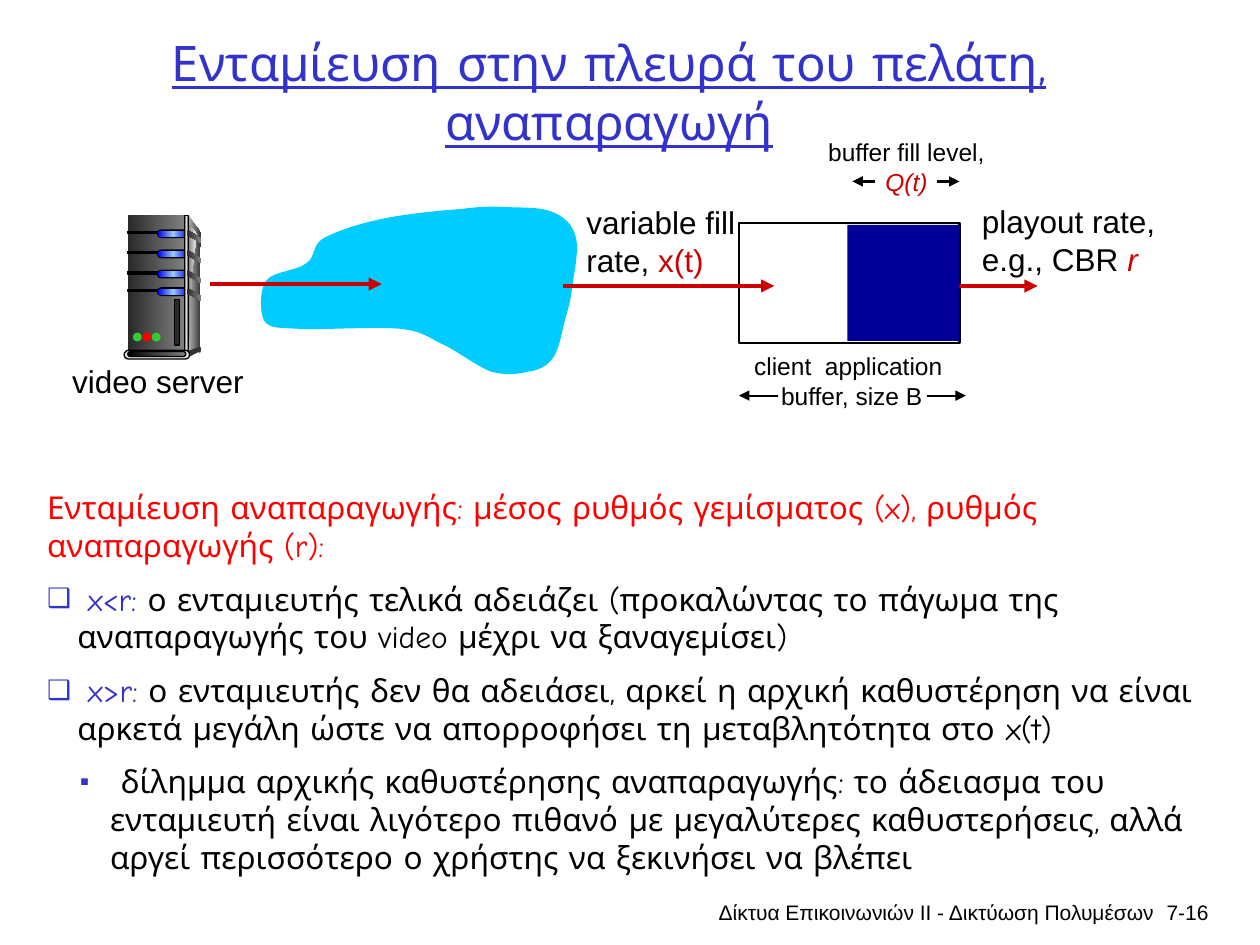
from dataclasses import dataclass

from lxml.etree import SubElement
from pptx import Presentation
from pptx.dml.color import RGBColor
from pptx.enum.shapes import MSO_CONNECTOR, MSO_SHAPE
from pptx.enum.text import MSO_ANCHOR, PP_ALIGN
from pptx.oxml.ns import qn
from pptx.util import Inches, Pt

CELL = Inches(0.01)  # the slide is a grid of 1000 columns by 750 rows
SANS, COMIC = "Arial", "Comic Neue"

BLACK = RGBColor(0x00, 0x00, 0x00)
CHARCOAL = RGBColor(0x29, 0x29, 0x29)
DARK = RGBColor(0x33, 0x33, 0x33)
GREY = RGBColor(0x80, 0x80, 0x80)
SILVER = RGBColor(0xDD, 0xDD, 0xDD)
PALE = RGBColor(0xF8, 0xF8, 0xF8)
BLUE = RGBColor(0x00, 0x00, 0xFF)
SKY = RGBColor(0x99, 0xCC, 0xFF)
CYAN = RGBColor(0x00, 0xCC, 0xFF)
NAVY = RGBColor(0x00, 0x00, 0x99)
INDIGO = RGBColor(0x33, 0x33, 0xCC)
GREEN = RGBColor(0x33, 0xCC, 0x33)
RED = RGBColor(0xFF, 0x00, 0x00)
CRIMSON = RGBColor(0xCC, 0x00, 0x00)


@dataclass
class Box:
    """A region of the slide, measured in grid cells."""
    left: float
    top: float
    width: float
    height: float

    def point(self, col, row):
        return round((self.left + col) * CELL), round((self.top + row) * CELL)

    def area(self, col, row, cols, rows):
        return *self.point(col, row), round(cols * CELL), round(rows * CELL)

    def whole(self):
        return self.area(0, 0, self.width, self.height)


def paint(shape, colours, line=None):
    """Fill with nothing, one colour or an even left-to-right gradient."""
    shape.shadow.inherit = False
    if not colours:
        shape.fill.background()
    elif len(colours) == 1:
        shape.fill.solid()
        shape.fill.fore_color.rgb = colours[0]
    else:
        shape.fill.gradient()
        shape.fill.gradient_angle = 0
        stops = shape._element.spPr.find(".//" + qn("a:gsLst"))
        for stop in list(stops):
            stops.remove(stop)
        for i, colour in enumerate(colours):
            position = str(round(100000 * i / (len(colours) - 1)))
            stop = SubElement(stops, qn("a:gs"), pos=position)
            SubElement(stop, qn("a:srgbClr"), val=str(colour))
    if line:
        shape.line.color.rgb = BLACK
        shape.line.width = Pt(line)
    else:
        shape.line.fill.background()


def add_part(shapes, kind, area, colours, line=None):
    part = shapes.add_shape(kind, *area)
    if kind == MSO_SHAPE.ROUNDED_RECTANGLE:
        part.adjustments[0] = 0.5
    paint(part, colours, line)


def add_outline(shapes, box, start, segments, colours):
    """Each segment is (end,) for a line or (control, control, end) for a curve."""
    builder = shapes.build_freeform(*box.point(*start))
    builder.add_line_segments([box.point(*segment[-1]) for segment in segments], close=True)
    outline = builder.convert_to_shape()
    paint(outline, colours)
    edges = outline._element.spPr.findall(".//" + qn("a:lnTo"))
    for edge, segment in zip(edges, segments):
        if len(segment) == 3:
            edge.tag = qn("a:cubicBezTo")
            edge.remove(edge[0])
            for x, y in (box.point(*point) for point in segment):
                SubElement(edge, qn("a:pt"), x=str(x - outline.left), y=str(y - outline.top))


def add_arrow(shapes, box, start, end, colour=BLACK, width=1.25):
    arrow = shapes.add_connector(MSO_CONNECTOR.STRAIGHT, *box.point(*start), *box.point(*end))
    arrow.line.color.rgb = colour
    arrow.line.width = Pt(width)
    SubElement(arrow.line._ln, qn("a:tailEnd"), type="triangle")
    SubElement(arrow._element.spPr, qn("a:effectLst"))


def write(paragraph, runs, size, font=SANS):
    for text, colour, *italic in runs:
        run = paragraph.add_run()
        run.text = text
        run.font.color.rgb = colour
        if italic:
            run.font.italic = True
    paragraph.font.size = Pt(size)
    paragraph.font.name = font


def add_label(shapes, area, lines, size, align=PP_ALIGN.LEFT, wrap=True):
    frame = shapes.add_textbox(*area).text_frame
    frame.word_wrap = wrap
    for i, runs in enumerate(lines):
        paragraph = frame.add_paragraph() if i else frame.paragraphs[0]
        paragraph.alignment = align
        write(paragraph, runs, size)


def add_title(slide, box):
    title = slide.shapes.title
    title.left, title.top, title.width, title.height = box.whole()
    title.text_frame.vertical_anchor = MSO_ANCHOR.MIDDLE
    paragraph = title.text_frame.paragraphs[0]
    paragraph.alignment = PP_ALIGN.CENTER
    write(paragraph, [("Ενταμίευση στην πλευρά του πελάτη, αναπαραγωγή", INDIGO)], 28, COMIC)
    paragraph.font.underline = True


def add_server(slide, box):
    shapes = slide.shapes.add_group_shape().shapes
    rect, pill, oval = MSO_SHAPE.RECTANGLE, MSO_SHAPE.ROUNDED_RECTANGLE, MSO_SHAPE.OVAL
    metal = [CHARCOAL, GREY]
    bays = (11, 27, 43, 57)
    add_outline(shapes, box, (51, 0), [[(61, 14)], [(60, 104)], [(48, 109)]], [SILVER, DARK])
    add_part(shapes, rect, box.area(3, 0, 45, 108), metal)
    add_outline(shapes, box, (51, 7), [
        [(51, 7), (53, 8), (58, 15)], [(51, 55), (52, 107), (51, 106)]], [GREY, PALE])
    for row in bays:
        add_part(shapes, rect, box.area(3, row + 1.5, 26, 2), [BLACK], 0.75)
        add_part(shapes, pill, box.area(26, row, 25, 7), [BLACK])
        add_part(shapes, pill, box.area(27, row + 1, 24, 5), [BLUE, SKY, BLUE])
    add_part(shapes, rect, box.area(48, 0, 3, 108), [DARK, SILVER, DARK], 0.75)
    for row in bays:
        add_outline(shapes, box, (50, row + 1), [
            [(52, row + 1), (56, row + 4), (61, row + 7)], [(61, row + 11)],
            [(61, row + 11), (55, row + 7), (50, row + 5)]], metal)
    add_part(shapes, oval, box.area(59, 104, 2, 5), [DARK])
    add_outline(shapes, box, (50, 108), [[(50, 113)], [(60, 108)], [(60, 104)]], [DARK])
    add_part(shapes, pill, box.area(0, 107, 52, 7), [SILVER], 0.75)
    add_part(shapes, pill, box.area(3, 108, 46, 4), [BLACK, GREY], 0.75)
    for i, lamp in enumerate((GREEN, RED, GREEN)):
        add_part(shapes, oval, box.area(7 + 7.5 * i, 93, 7, 7), [lamp])
    add_part(shapes, rect, box.area(40, 67, 4, 36), [CHARCOAL], 0.75)
    add_label(slide.shapes, box.area(-51, 111.5, 156, 40), [[("video server", BLACK)]], 18, wrap=False)


def add_network(slide, box):
    add_outline(slide.shapes, box, (159, 2), [
        [(143, 3), (114, 6), (96, 10)], [(77, 14), (60, 20), (51, 25)],
        [(41, 31), (45, 40), (37, 45)], [(30, 51), (11, 51), (5, 59)],
        [(0, 66), (0, 85), (4, 91)], [(9, 97), (15, 96), (32, 97)],
        [(50, 98), (93, 95), (112, 97)], [(131, 99), (135, 105), (147, 110)],
        [(159, 116), (173, 127), (184, 131)], [(195, 134), (205, 133), (213, 131)],
        [(221, 130), (228, 127), (233, 120)], [(238, 113), (240, 99), (243, 88)],
        [(246, 78), (248, 69), (249, 58)], [(251, 46), (254, 30), (250, 21)],
        [(247, 12), (239, 6), (229, 3)], [(219, 0), (202, 1), (190, 0)],
        [(178, 0), (175, 0), (159, 2)]], [CYAN])
    add_arrow(slide.shapes, box, (-39, 61.5), (97, 61.5), CRIMSON, 2.5)


def add_buffer(slide, box):
    shapes, centre, middle = slide.shapes, PP_ALIGN.CENTER, 50
    add_part(shapes, MSO_SHAPE.RECTANGLE, box.whole(), [], 1.25)
    add_arrow(shapes, box, (-140, middle), (28, middle), CRIMSON, 2.5)
    add_arrow(shapes, box, (166, middle), (237, middle), CRIMSON, 2.5)
    add_part(shapes, MSO_SHAPE.RECTANGLE, box.area(86, 1.5, 89, 92), [NAVY])
    add_label(shapes, box.area(-131, -20.5, 145, 70), [
        [("variable fill", BLACK)], [("rate, ", BLACK), ("x(t)", CRIMSON)]], 18, wrap=False)
    add_label(shapes, box.area(183, -21.5, 158, 70), [
        [("playout rate,", BLACK)], [("e.g., CBR ", BLACK), ("r", CRIMSON, True)]], 18, wrap=False)
    add_label(shapes, box.area(-1, 97, 181, 57), [
        [("client  application ", BLACK)], [("buffer, size B", BLACK)]], 14, centre)
    add_label(shapes, box.area(55, -73, 156, 57), [
        [("buffer fill level, ", BLACK), ("Q(t)", CRIMSON, True)]], 14, centre)
    for row, left, left_tip, right, right_tip in ((137, 31, 0, 149, 180), (-33, 108, 90, 157, 175)):
        add_arrow(shapes, box, (left, row), (left_tip, row))
        add_arrow(shapes, box, (right, row), (right_tip, row))


def add_explanation(slide, box):
    frame = slide.shapes.add_textbox(*box.whole()).text_frame
    frame.word_wrap = True
    points = [
        (None, 0, [("Ενταμίευση αναπαραγωγής: μέσος ρυθμός γεμίσματος (x), ρυθμός αναπαραγωγής (r):", RED)]),
        ("❑", 0.24, [(" x<r: ", INDIGO), ("ο ενταμιευτής τελικά αδειάζει (προκαλώντας το πάγωμα της "
                     "αναπαραγωγής του video μέχρι να ξαναγεμίσει)", BLACK)]),
        ("❑", 0.24, [(" x>r: ", INDIGO), ("ο ενταμιευτής δεν θα αδειάσει, αρκεί η αρχική καθυστέρηση να είναι "
                     "αρκετά μεγάλη ώστε να απορροφήσει τη μεταβλητότητα στο x(t)", BLACK)]),
        ("▪", 0.5, [(" δίλημμα αρχικής καθυστέρησης αναπαραγωγής: το άδειασμα του ενταμιευτή είναι λιγότερο "
                    "πιθανό με μεγαλύτερες καθυστερήσεις, αλλά αργεί περισσότερο ο χρήστης να ξεκινήσει "
                    "να βλέπει", BLACK)]),
    ]
    for i, (bullet, margin, runs) in enumerate(points):
        paragraph = frame.add_paragraph() if i else frame.paragraphs[0]
        if bullet:
            paragraph.level = 1 if bullet == "▪" else 0
            properties = paragraph._p.get_or_add_pPr()
            properties.set("marL", str(Inches(margin)))
            properties.set("indent", str(-Inches(0.24)))
            SubElement(SubElement(properties, qn("a:buClr")), qn("a:srgbClr"), val=str(INDIGO))
            SubElement(properties, qn("a:buSzPct"), val="85000")
            SubElement(properties, qn("a:buFont"), typeface=SANS)
            SubElement(properties, qn("a:buChar"), char=bullet)
            paragraph.space_before = Pt(9)
        write(paragraph, runs, 18, COMIC)


def add_footer(slide, box):
    for col, cols, text in ((0, 472, "Δίκτυα Επικοινωνιών ΙΙ - Δικτύωση Πολυμέσων"), (441, 74, "7-16")):
        add_label(slide.shapes, box.area(col, 0, cols, box.height), [[(text, BLACK)]], 12, PP_ALIGN.RIGHT)


def main():
    deck = Presentation()
    deck.slide_width, deck.slide_height = 1000 * CELL, 750 * CELL
    slide = deck.slides.add_slide(deck.slide_layouts[5])
    add_title(slide, Box(58.5, 25, 850, 95))
    add_server(slide, Box(98.5, 171, 62, 114))
    add_network(slide, Box(206, 164, 254, 134))
    add_buffer(slide, Box(586.5, 177, 175, 95))
    add_explanation(slide, Box(27.5, 382.5, 947, 326))
    add_footer(slide, Box(454, 709, 515, 50))
    deck.save("out.pptx")


if __name__ == "__main__":
    main()
